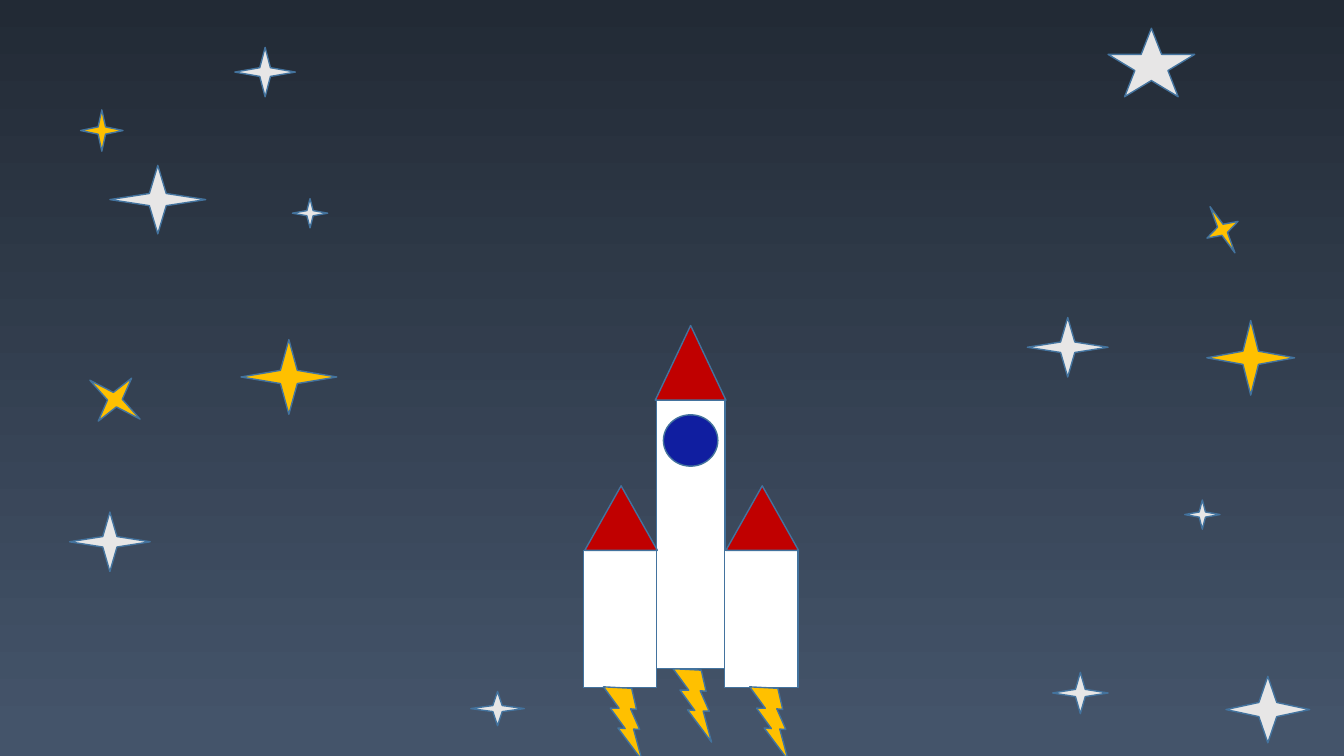
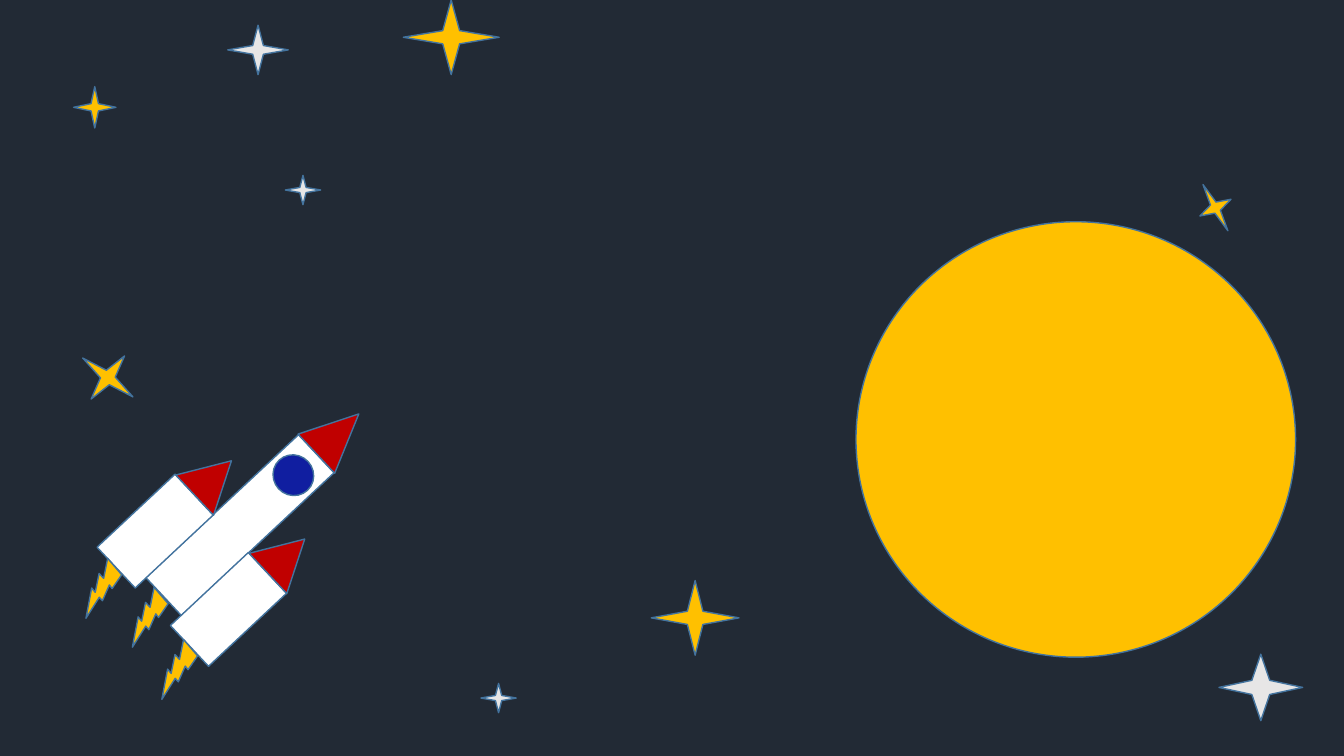
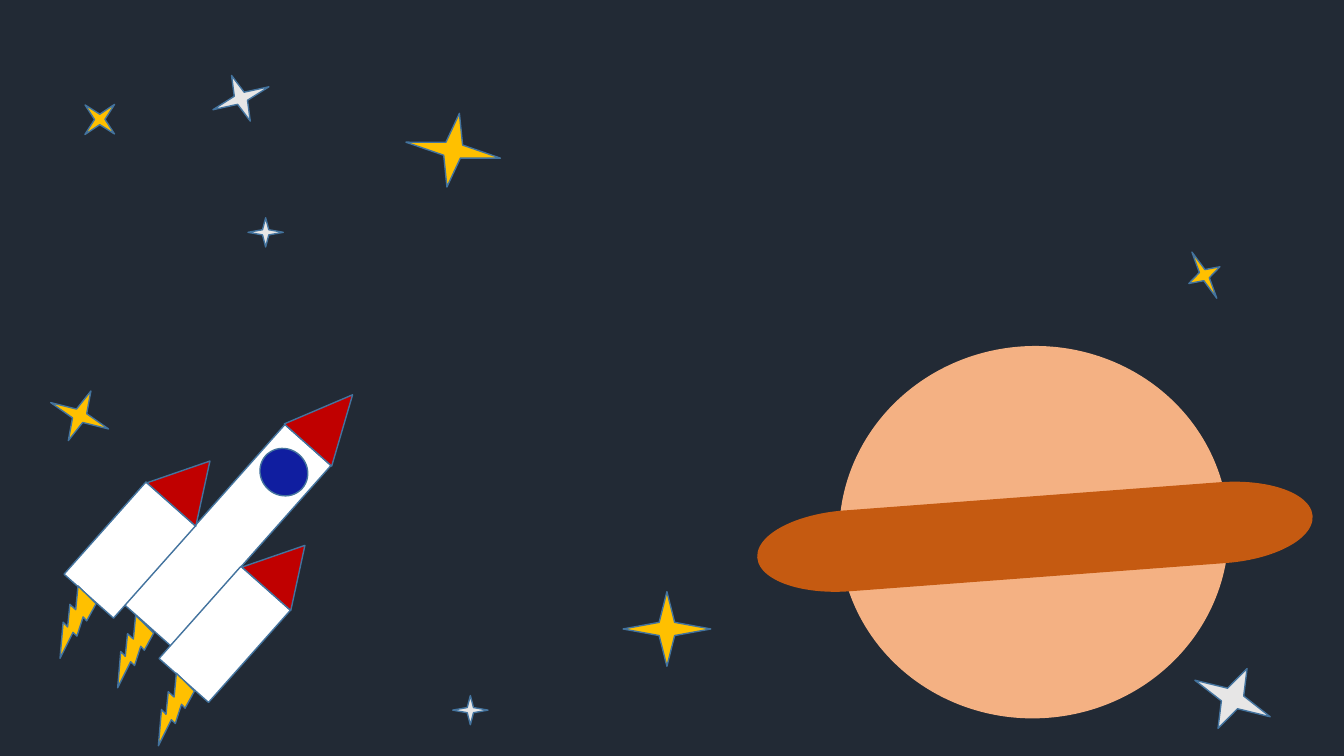
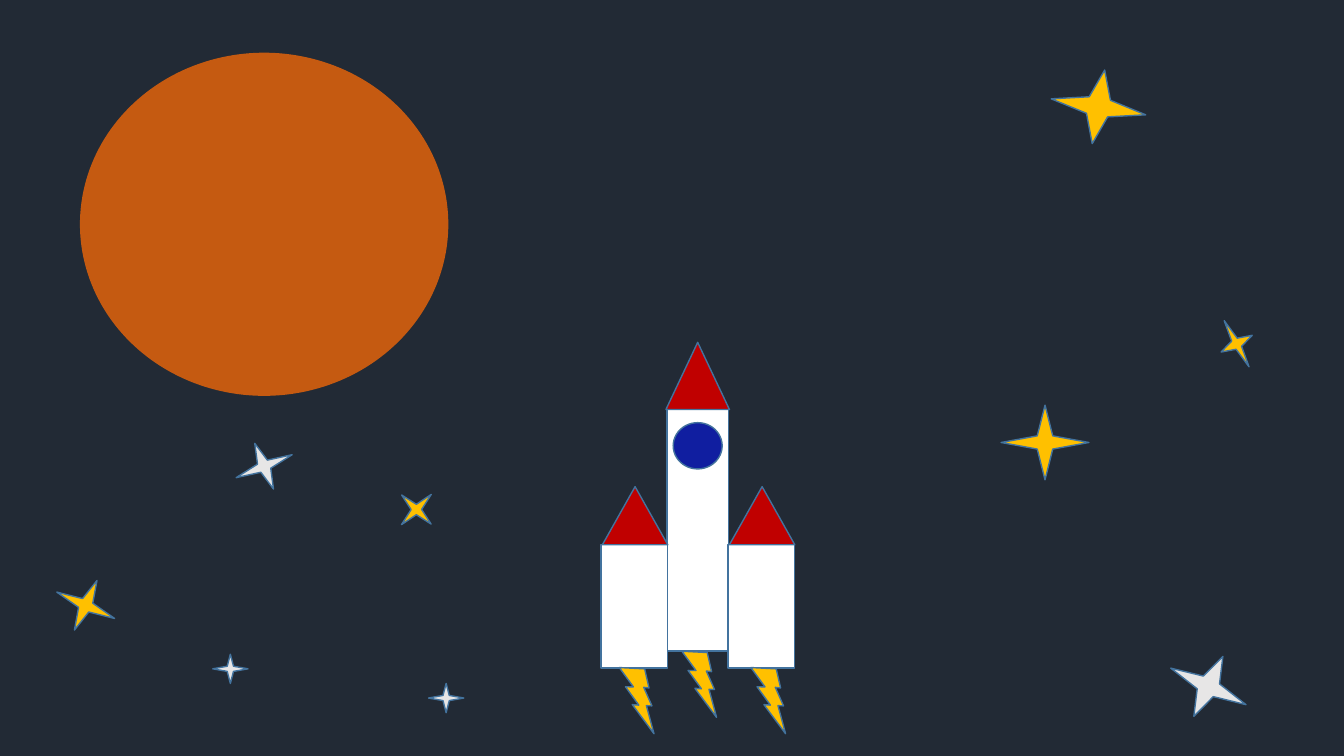
from dataclasses import dataclass, replace
from math import cos, radians, sin

from pptx import Presentation
from pptx.dml.color import RGBColor
from pptx.enum.shapes import MSO_SHAPE
from pptx.shapes.shapetree import GroupShapes, SlideShapes
from pptx.slide import Slide
from pptx.util import Inches, Pt

NIGHT = RGBColor(0x22, 0x2A, 0x35)
DUSK = RGBColor(0x44, 0x54, 0x6A)
OUTLINE = RGBColor(0x43, 0x73, 0x9E)
WHITE = RGBColor(0xFF, 0xFF, 0xFF)
RED = RGBColor(0xC0, 0x00, 0x00)
GOLD = RGBColor(0xFF, 0xC0, 0x00)
SILVER = RGBColor(0xE7, 0xE6, 0xE6)
BLUE = RGBColor(0x10, 0x1E, 0xA0)
PEACH = RGBColor(0xF4, 0xB1, 0x83)
RUST = RGBColor(0xC5, 0x5A, 0x11)

BOX = MSO_SHAPE.RECTANGLE
CONE = MSO_SHAPE.ISOSCELES_TRIANGLE
BOLT = MSO_SHAPE.LIGHTNING_BOLT
DISC = MSO_SHAPE.OVAL
BAND = MSO_SHAPE.FLOWCHART_TERMINATOR
STAR4 = MSO_SHAPE.STAR_4_POINT
STAR5 = MSO_SHAPE.STAR_5_POINT


@dataclass(frozen=True)
class Piece:
    """One filled shape; x and y are its left top corner in inches."""
    preset: MSO_SHAPE
    width: float
    height: float
    fill: RGBColor
    x: float = 0
    y: float = 0
    rotation: float = 0
    line: RGBColor = OUTLINE
    waist: float | None = None


@dataclass(frozen=True)
class Rocket:
    """Placement of the rocket by the centre of its body."""
    x: float
    y: float
    scale_x: float = 1
    scale_y: float = 1
    rotation: float = 0


@dataclass(frozen=True)
class Scene:
    rocket: Rocket
    stars: tuple[Piece, ...]
    star_places: tuple[tuple[float, float], ...]
    planet: tuple[Piece, ...] = ()
    dusk: bool = False


# x and y of the rocket parts are their centres, measured from the body's centre
BOOSTER = Piece(BOX, 0.73, 1.36, WHITE, y=0.84)
SIDE_NOSE = Piece(CONE, 0.72, 0.64, RED, y=-0.16)
FLAME = Piece(BOLT, 0.66, 0.6, GOLD, y=1.83, rotation=25.6)
ROCKET_PARTS = (
    Piece(BOX, 0.68, 2.66, WHITE),
    replace(BOOSTER, x=-0.7),
    replace(BOOSTER, x=0.7),
    Piece(CONE, 0.7, 0.74, RED, y=-1.7),
    replace(SIDE_NOSE, x=-0.69),
    replace(SIDE_NOSE, x=0.71),
    replace(FLAME, x=-0.65),
    replace(FLAME, x=0.04, y=1.65),
    replace(FLAME, x=0.8),
    Piece(DISC, 0.54, 0.51, BLUE, y=-0.93),
)

MEDIUM_STAR = Piece(STAR4, 0.8, 0.59, SILVER)
TINY_STAR = Piece(STAR4, 0.35, 0.29, SILVER)
LAUNCH_STARS = (
    Piece(STAR4, 0.95, 0.68, SILVER),
    Piece(STAR4, 0.55, 0.41, SILVER),
    Piece(STAR4, 0.53, 0.34, SILVER),
    Piece(STAR5, 0.86, 0.68, SILVER),
    MEDIUM_STAR,
    MEDIUM_STAR,
)
COMMON_STARS = (
    Piece(STAR4, 0.42, 0.41, GOLD),
    Piece(STAR4, 0.95, 0.74, GOLD),
    Piece(STAR4, 0.87, 0.74, GOLD),
    Piece(STAR4, 0.54, 0.63, GOLD, rotation=307.8),
    Piece(STAR4, 0.35, 0.52, GOLD, rotation=331.7),
    TINY_STAR,
    TINY_STAR,
    Piece(STAR4, 0.83, 0.66, SILVER, waist=0.151),
    Piece(STAR4, 0.6, 0.49, SILVER),
)
TILTS = (314.6, 9.6, 0, 294.5, 331.7, 0, 0, 25.9, 337.7)
TILTED_STARS = tuple(
    replace(star, rotation=tilt) for star, tilt in zip(COMMON_STARS, TILTS)
)
FINAL_STARS = (
    TILTED_STARS[0], replace(TILTED_STARS[1], waist=0.159), *TILTED_STARS[2:]
)

SCENES = (
    Scene(
        Rocket(6.85, 5.3),
        LAUNCH_STARS + COMMON_STARS,
        ((1.09, 1.64), (10.44, 6.67), (4.67, 6.86), (10.99, 0.28),
         (10.19, 3.15), (0.69, 5.08), (0.8, 1.09), (2.39, 3.37),
         (11.97, 3.18), (0.87, 3.65), (11.95, 2.02), (2.9, 1.97),
         (11.75, 4.96), (12.16, 6.71), (2.33, 0.47)),
        dusk=True,
    ),
    Scene(
        Rocket(2.38, 5.21, 0.76, 0.78, 46.9),
        COMMON_STARS,
        ((0.73, 0.86), (4, 0), (6.46, 5.76), (0.8, 3.43), (11.88, 1.8),
         (2.83, 1.74), (4.77, 6.78), (12.09, 6.49), (2.26, 0.25)),
        planet=(Piece(DISC, 4.36, 4.32, GOLD, 8.49, 2.2),),
    ),
    Scene(
        Rocket(2.26, 5.31, 0.9, 0.9, 41.6),
        TILTED_STARS,
        ((0.78, 0.98), (4.02, 1.12), (6.18, 5.87), (0.52, 3.81), (11.77, 2.47),
         (2.46, 2.16), (4.49, 6.9), (11.81, 6.6), (2.09, 0.73)),
        planet=(
            Piece(DISC, 3.85, 3.68, PEACH, 8.33, 3.44, 355.7, PEACH),
            Piece(BAND, 5.51, 0.79, RUST, 7.51, 4.93, 355.7, RUST),
        ),
    ),
    Scene(
        Rocket(6.92, 5.26, 0.9, 0.9),
        FINAL_STARS,
        ((3.92, 4.85), (10.42, 0.69), (9.93, 4.02), (0.58, 5.69), (12.09, 3.15),
         (2.11, 6.49), (4.25, 6.78), (11.57, 6.48), (2.32, 4.38)),
        planet=(Piece(DISC, 3.64, 3.39, RUST, 0.8, 0.53, line=RUST),),
    ),
)


def draw_piece(shapes: SlideShapes | GroupShapes, piece: Piece) -> None:
    shape = shapes.add_shape(
        piece.preset, Inches(piece.x), Inches(piece.y),
        Inches(piece.width), Inches(piece.height),
    )
    shape.rotation = piece.rotation
    shape.shadow.inherit = False
    shape.fill.solid()
    shape.fill.fore_color.rgb = piece.fill
    shape.line.color.rgb = piece.line
    shape.line.width = Pt(1)
    if piece.waist is not None:
        shape.adjustments[0] = piece.waist


def draw_pieces(slide: Slide, pieces: tuple[Piece, ...]) -> None:
    """Draw the pieces, grouped when there are several."""
    shapes = slide.shapes
    if len(pieces) > 1:
        shapes = shapes.add_group_shape().shapes
    for piece in pieces:
        draw_piece(shapes, piece)


def place_part(part: Piece, rocket: Rocket) -> Piece:
    """Scale a rocket part and turn it around the centre of the body."""
    turn = radians(rocket.rotation)
    dx, dy = part.x * rocket.scale_x, part.y * rocket.scale_y
    width, height = part.width * rocket.scale_x, part.height * rocket.scale_y
    return replace(
        part,
        width=width,
        height=height,
        x=rocket.x + dx * cos(turn) - dy * sin(turn) - width / 2,
        y=rocket.y + dx * sin(turn) + dy * cos(turn) - height / 2,
        rotation=part.rotation + rocket.rotation,
    )


def paint_sky(slide: Slide, dusk: bool) -> None:
    fill = slide.background.fill
    if not dusk:
        fill.solid()
        fill.fore_color.rgb = NIGHT
        return
    fill.gradient()
    fill.gradient_angle = 270
    for stop, color, position in zip(fill.gradient_stops, (NIGHT, DUSK), (0, 0.97)):
        stop.color.rgb = color
        stop.position = position


def draw_scene(slide: Slide, scene: Scene) -> None:
    paint_sky(slide, scene.dusk)
    draw_pieces(slide, tuple(place_part(part, scene.rocket) for part in ROCKET_PARTS))
    draw_pieces(slide, scene.planet)
    draw_pieces(slide, tuple(
        replace(star, x=x, y=y)
        for star, (x, y) in zip(scene.stars, scene.star_places)
    ))


def main() -> None:
    deck = Presentation()
    deck.slide_width, deck.slide_height = Inches(13.33), Inches(7.5)
    blank = deck.slide_layouts[6]
    for scene in SCENES:
        draw_scene(deck.slides.add_slide(blank), scene)
    deck.save("out.pptx")


if __name__ == "__main__":
    main()
